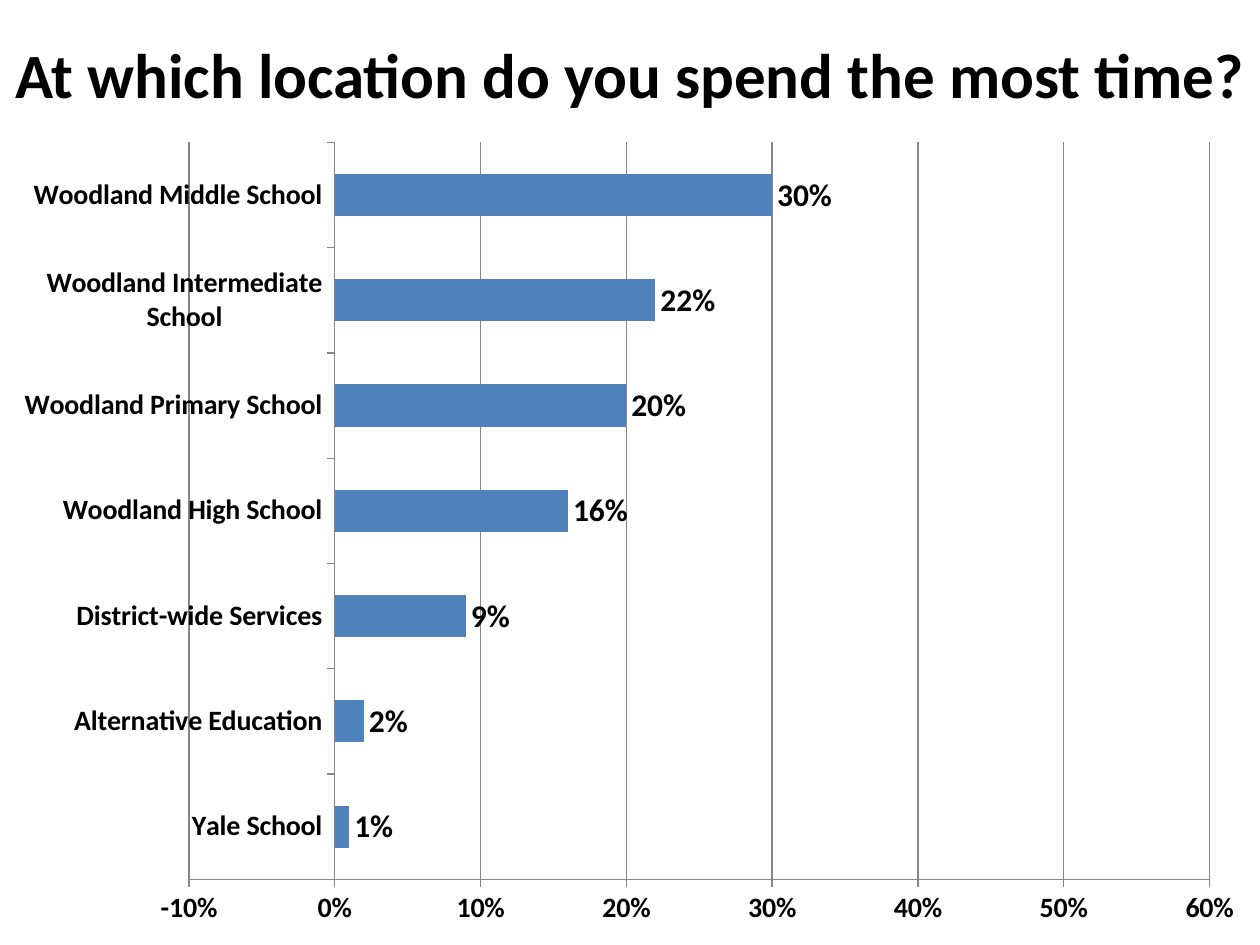
import pptx
import pptx.chart.data
import pptx.dml.color
import pptx.enum.chart
import pptx.enum.text
import pptx.oxml
import pptx.oxml.ns
import pptx.util

Pt = pptx.util.Pt

SCHOOL_SHARES = {
    "Yale School": 0.01,
    "Alternative Education": 0.02,
    "District-wide Services": 0.09,
    "Woodland High School": 0.16,
    "Woodland Primary School": 0.2,
    "Woodland Intermediate School": 0.22,
    "Woodland Middle School": 0.3,
}
PLOT_LAYOUT = {"x": 0.15, "y": 0.02, "w": 0.81, "h": 0.9}


def color(hex_string):
    return pptx.dml.color.RGBColor.from_string(hex_string)


class SurveySlide:
    """Draws survey elements on one slide in a shared style."""

    font_name = "Calibri"
    ink = "000000"
    bar_fill = "4F81BD"
    grid_line = "868686"

    def __init__(self, slide):
        self.slide = slide

    def style_font(self, font, size):
        font.name = self.font_name
        font.size = Pt(size)
        font.bold = True
        font.color.rgb = color(self.ink)

    def style_line(self, line):
        line.color.rgb = color(self.grid_line)
        line.width = Pt(0.75)

    def title(self, wording, left, top, width, height):
        heading = self.slide.shapes.add_textbox(Pt(left), Pt(top), Pt(width), Pt(height))
        frame = heading.text_frame
        frame.word_wrap = True
        frame.vertical_anchor = pptx.enum.text.MSO_ANCHOR.MIDDLE
        question = frame.paragraphs[0]
        question.text = wording
        question.alignment = pptx.enum.text.PP_ALIGN.CENTER
        self.style_font(question.font, 36)

    def bar_chart(self, shares, left, top, width, height):
        answers = pptx.chart.data.CategoryChartData(number_format="0%")
        answers.categories = list(shares)
        answers.add_series("Series 1", list(shares.values()))
        chart = self.slide.shapes.add_chart(
            pptx.enum.chart.XL_CHART_TYPE.BAR_CLUSTERED,
            Pt(left), Pt(top), Pt(width), Pt(height), answers,
        ).chart
        chart.has_legend = False
        chart.has_title = False
        chart.font.name = self.font_name
        chart.font.size = Pt(18)
        chart.font.color.rgb = color(self.ink)
        self.bars(chart.plots[0])
        self.axes(chart)
        self.place_plot(chart)

    def bars(self, plot):
        plot.gap_width = 150
        plot.vary_by_categories = False
        share = plot.series[0]
        share.invert_if_negative = False
        share.format.fill.solid()
        share.format.fill.fore_color.rgb = color(self.bar_fill)
        plot.has_data_labels = True
        labels = plot.data_labels
        labels.show_value = True
        labels.number_format = "0%"
        labels.number_format_is_linked = False
        labels.position = pptx.enum.chart.XL_LABEL_POSITION.OUTSIDE_END
        self.style_font(labels.font, 18)

    def axes(self, chart):
        schools, percent = chart.category_axis, chart.value_axis
        for axis in (schools, percent):
            axis.major_tick_mark = pptx.enum.chart.XL_TICK_MARK.OUTSIDE
            axis.minor_tick_mark = pptx.enum.chart.XL_TICK_MARK.NONE
            self.style_font(axis.tick_labels.font, 16)
            self.style_line(axis.format.line)
        schools.has_major_gridlines = False
        percent.minimum_scale = -0.1
        percent.maximum_scale = 0.6
        percent.major_unit = 0.1
        percent.tick_labels.number_format = "0%"
        percent.tick_labels.number_format_is_linked = False
        percent.has_major_gridlines = True
        self.style_line(percent.major_gridlines.format.line)

    def place_plot(self, chart):
        settings = [("layoutTarget", "inner"), ("xMode", "edge"), ("yMode", "edge")]
        settings += PLOT_LAYOUT.items()
        inner = "".join(f'<c:{tag} val="{value}"/>' for tag, value in settings)
        layout = pptx.oxml.parse_xml(
            f'<c:layout {pptx.oxml.ns.nsdecls("c")}>'
            f"<c:manualLayout>{inner}</c:manualLayout></c:layout>"
        )
        plot_area = chart.plots[0]._element.getparent()
        for automatic in plot_area.findall(pptx.oxml.ns.qn("c:layout")):
            plot_area.remove(automatic)
        plot_area.insert(0, layout)


def main():
    presentation = pptx.Presentation()
    presentation.slide_width = Pt(720)
    presentation.slide_height = Pt(540)
    survey = SurveySlide(presentation.slides.add_slide(presentation.slide_layouts[6]))
    survey.title("At which location do you spend the most time?", 0, 0, 720, 84)
    survey.bar_chart(SCHOOL_SHARES, 0, 72, 720, 468)
    presentation.save("out.pptx")


if __name__ == "__main__":
    main()
